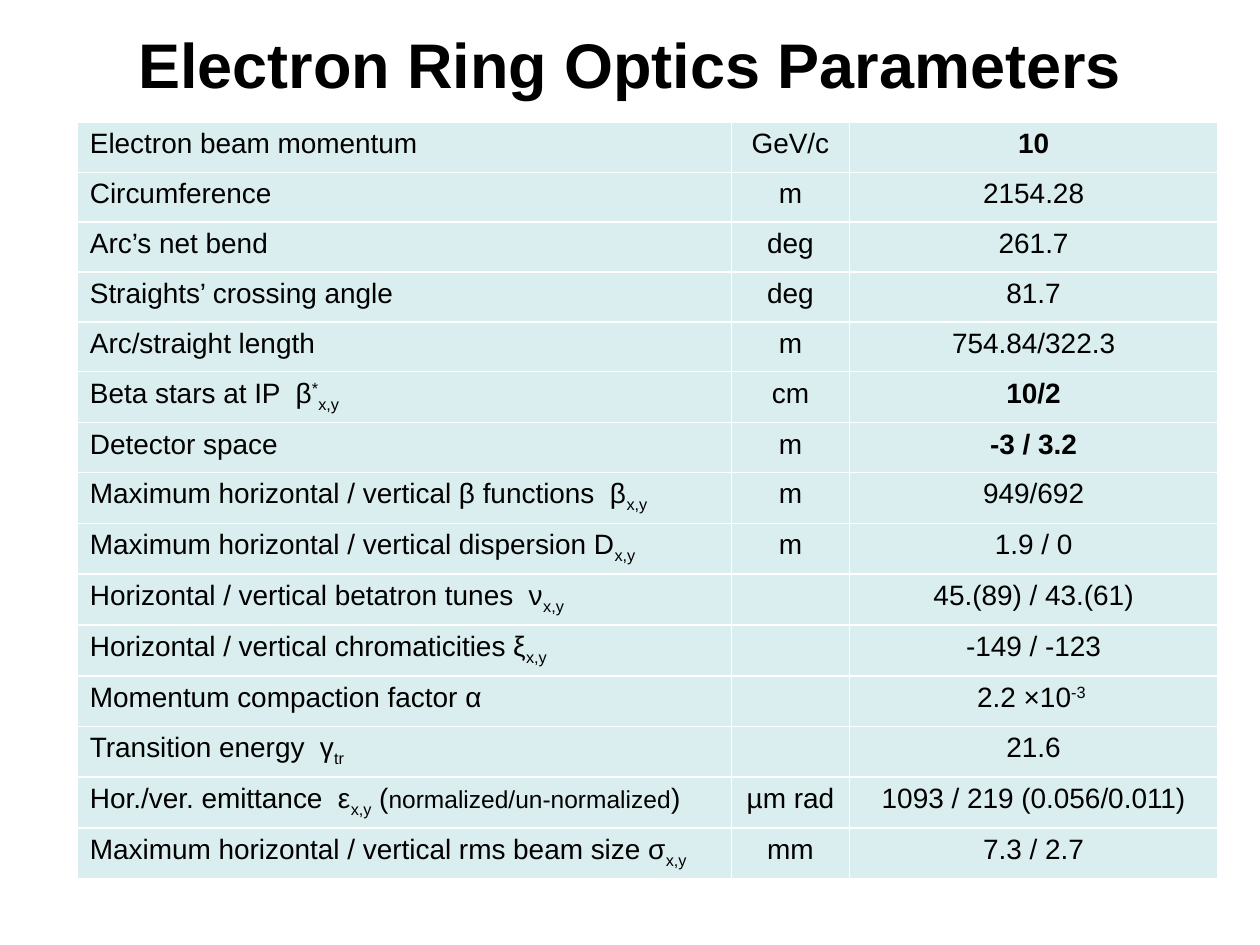
import pptx
import pptx.dml.color
import pptx.enum.text
import pptx.oxml
import pptx.oxml.ns
import pptx.util

Pt = pptx.util.Pt
ALIGN = pptx.enum.text.PP_ALIGN
ANCHOR = pptx.enum.text.MSO_ANCHOR

BLACK, WHITE, PALE_TEAL = "000000", "FFFFFF", "DAEDEF"
BODY = {"name": "Arial", "size": Pt(16), "bold": False}
BOLD = {"bold": True}
SMALL = {"size": Pt(14)}
SUPER, SUB = 30000, -25000
XY = ("x,y", {}, SUB)

# Each cell is a list of spans: text, format changes, baseline shift
ROWS = [
    (["Electron beam momentum"], "GeV/c", [("10", BOLD, 0)]),
    (["Circumference"], "m", ["2154.28"]),
    (["Arc’s net bend"], "deg", ["261.7"]),
    (["Straights’ crossing angle"], "deg", ["81.7"]),
    (["Arc/straight length"], "m", ["754.84/322.3"]),
    (["Beta stars at IP  β", ("*", {}, SUPER), XY], "cm", [("10/2", BOLD, 0)]),
    (["Detector space"], "m", [("-3 / 3.2", BOLD, 0)]),
    (["Maximum horizontal / vertical β functions  β", XY], "m", ["949/692"]),
    (["Maximum horizontal / vertical dispersion D", XY], "m", ["1.9 / 0"]),
    (["Horizontal / vertical betatron tunes  ν", XY], "", ["45.(89) / 43.(61)"]),
    (["Horizontal / vertical chromaticities ξ", XY], "", ["-149 / -123"]),
    (["Momentum compaction factor α"], "", ["2.2 ×10", ("-3 ", {}, SUPER)]),
    (["Transition energy  γ", ("tr", {}, SUB)], "", ["21.6"]),
    (["Hor./ver. emittance  ε", XY, " (", ("normalized/un-normalized", SMALL, 0), ")"],
     "µm rad", ["1093 / 219 (0.056/0.011)"]),
    (["Maximum horizontal / vertical rms beam size σ", XY], "mm", ["7.3 / 2.7"]),
]


def color(value):
    return pptx.dml.color.RGBColor.from_string(value)


def set_values(target, values):
    for name, value in values.items():
        setattr(target, name, value)


def add_span(para, text, changes, baseline=0):
    span = para.add_run()
    span.text = text
    set_values(span.font, {**BODY, **changes})
    span.font.color.rgb = color(BLACK)
    if baseline:
        span.font._element.set("baseline", str(baseline))


def add_borders(cell):
    properties = cell._tc.get_or_add_tcPr()
    for side in ("lnL", "lnR", "lnT", "lnB"):
        properties.append(pptx.oxml.parse_xml(
            f'<a:{side} {pptx.oxml.ns.nsdecls("a")} w="{Pt(1)}"><a:solidFill>'
            f'<a:srgbClr val="{WHITE}"/></a:solidFill></a:{side}>'))


def fill_cell(cell, spans, alignment):
    add_borders(cell)
    cell.fill.solid()
    cell.fill.fore_color.rgb = color(PALE_TEAL)
    set_values(cell, {"margin_left": Pt(7.2), "margin_right": Pt(7.2),
                      "margin_top": Pt(3.6), "margin_bottom": Pt(3.6)})
    para = cell.text_frame.paragraphs[0]
    para.alignment = alignment
    for span in spans:
        add_span(para, *((span, {}) if isinstance(span, str) else span))


def add_title(page, left, top, width, height):
    box = page.shapes.add_textbox(Pt(left), Pt(top), Pt(width), Pt(height))
    set_values(box.text_frame, {"word_wrap": True, "vertical_anchor": ANCHOR.MIDDLE})
    para = box.text_frame.paragraphs[0]
    para.alignment = ALIGN.CENTER
    add_span(para, "Electron Ring Optics Parameters", {"size": Pt(36), "bold": True})


def add_parameter_table(page, left, top, width, height):
    shares = (5.19, 0.94, 2.92)
    frame = page.shapes.add_table(len(ROWS), len(shares),
                                  Pt(left), Pt(top), Pt(width), Pt(height))
    table = frame.table
    set_values(table, {"first_row": False, "horz_banding": False})
    for column, share in zip(table.columns, shares):
        column.width = Pt(width * share / sum(shares))
    for row, (label, unit, value) in zip(table.rows, ROWS):
        row.height = Pt(height / len(ROWS))
        parts = (label, [unit] if unit else [], value)
        alignments = (ALIGN.LEFT, ALIGN.CENTER, ALIGN.CENTER)
        for cell, spans, alignment in zip(row.cells, parts, alignments):
            fill_cell(cell, spans, alignment)


def main():
    deck = pptx.Presentation()
    set_values(deck, {"slide_width": Pt(720), "slide_height": Pt(540)})
    page = deck.slides.add_slide(deck.slide_layouts[6])
    # Heading
    add_title(page, 54, 0, 612, 72)
    # Ring parameters with units and values
    add_parameter_table(page, 44.2, 70, 651.6, 427.7)
    deck.save("out.pptx")


if __name__ == "__main__":
    main()
